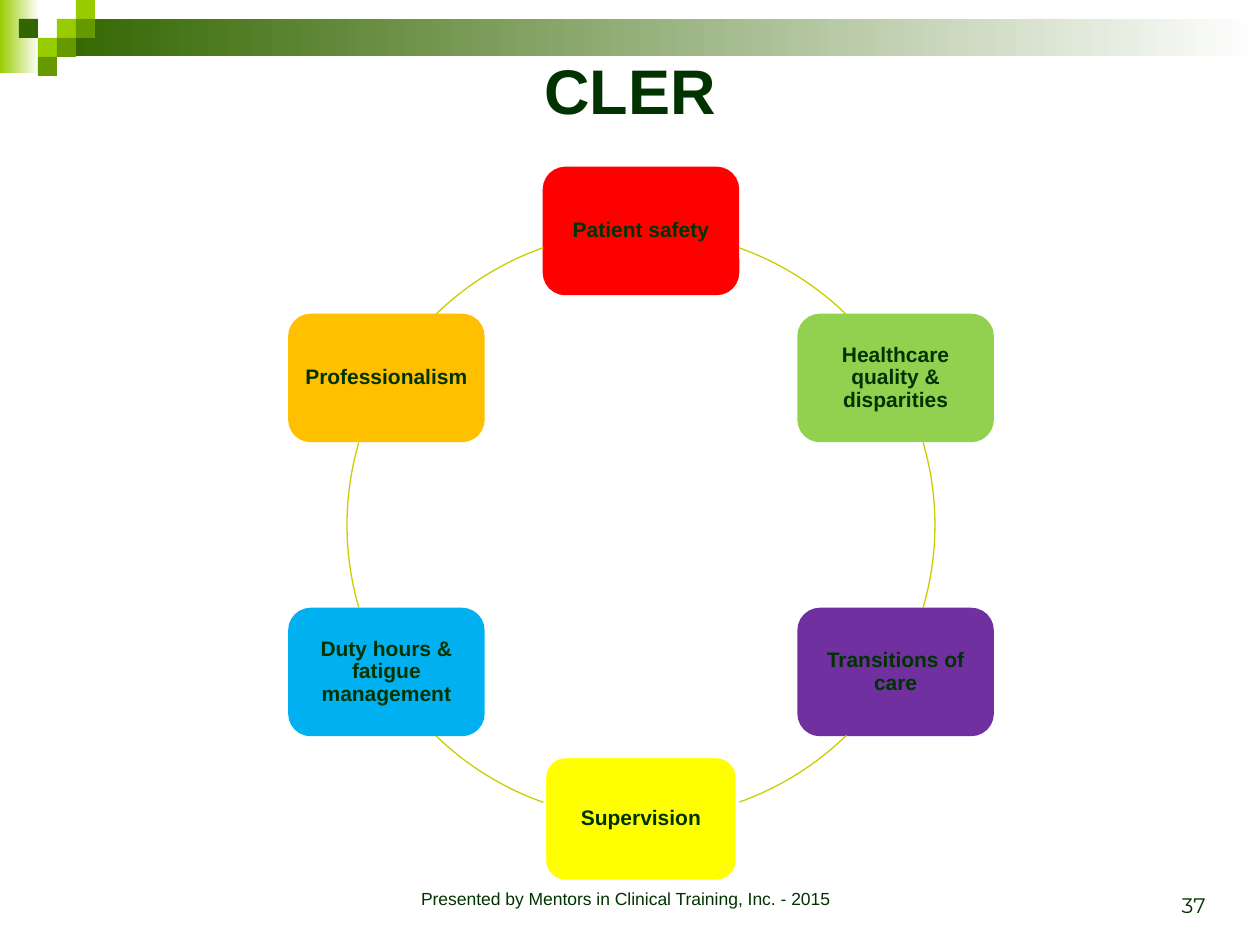
import math

import pptx
import pptx.dml.color
import pptx.enum.shapes
import pptx.enum.text
import pptx.util

SHAPES = pptx.enum.shapes.MSO_SHAPE
ANCHOR = pptx.enum.text.MSO_ANCHOR
ALIGN = pptx.enum.text.PP_ALIGN
PX = 914400 / 126
INK = "003300"


def color(value):
    return pptx.dml.color.RGBColor.from_string(value)


def write(shape, text, size, font="Arial", bold=False, align=ALIGN.CENTER,
          anchor=ANCHOR.MIDDLE):
    """Set one styled paragraph in the shape and return it."""
    frame = shape.text_frame
    frame.word_wrap = True
    frame.vertical_anchor = anchor
    para = frame.paragraphs[0]
    para.text = text
    para.alignment = align
    para.font.name = font
    para.font.size = pptx.util.Pt(size)
    para.font.bold = bold
    para.font.color.rgb = color(INK)
    return para


deck = pptx.Presentation()
deck.slide_width = round(1260 * PX)
deck.slide_height = round(945 * PX)
page = deck.slides.add_slide(deck.slide_layouts[6])

# Fading bands across the top
for left, top, width, height, start in [
    (0, 0, 39, 73, "99CC00"),
    (57, 19, 1203, 37, "336600"),
]:
    band = page.shapes.add_shape(
        SHAPES.RECTANGLE, *(round(v * PX) for v in (left, top, width, height)))
    band.shadow.inherit = False
    band.line.fill.background()
    band.fill.gradient()
    band.fill.gradient_angle = 0
    for stop, position, shade in zip(band.fill.gradient_stops, (0, 1), (start, "FFFFFF")):
        stop.position = position
        stop.color.rgb = color(shade)

# Checkered corner on a square grid
TILE = 19
for column, row, fill in [
    (3, 1, "99CC00"), (4, 0, "99CC00"), (4, 1, "669900"), (2, 2, "99CC00"),
    (1, 1, "336600"), (3, 2, "669900"), (2, 3, "669900"),
]:
    tile = page.shapes.add_shape(
        SHAPES.RECTANGLE,
        *(round(v * TILE * PX) for v in (column, row, 1, 1)))
    tile.shadow.inherit = False
    tile.fill.solid()
    tile.fill.fore_color.rgb = color(fill)
    tile.line.fill.background()

title = page.shapes.add_textbox(*(round(v * PX) for v in (63, 10, 1134, 158)))
write(title, "CLER", 36, bold=True)

# Topics around a ring, clockwise from the top
CENTER_X, CENTER_Y, RADIUS = 641, 525, 294
NODE_WIDTH, NODE_HEIGHT = 193, 125
topics = [
    ("Patient safety", "FF0000", "FF0000"),
    ("Healthcare quality & disparities", "92D050", "92D050"),
    ("Transitions of care", "7030A0", "7030A0"),
    ("Supervision", "FFFF00", "FFFFFF"),
    ("Duty hours & fatigue management", "00B0F0", "00B0F0"),
    ("Professionalism", "FFC000", "FFC000"),
]
# Start and end of the visible arc after each topic, in degrees
arcs = [(289.4, 314.3), (343.7, 16.3), (45.7, 70.6),
        (109.4, 134.3), (163.7, 196.3), (225.7, 250.6)]

for index, ((text, fill, outline), angles) in enumerate(zip(topics, arcs)):
    turn = math.radians(index * 360 / len(topics))
    left = CENTER_X + RADIUS * math.sin(turn) - NODE_WIDTH / 2
    top = CENTER_Y - RADIUS * math.cos(turn) - NODE_HEIGHT / 2
    node = page.shapes.add_shape(
        SHAPES.ROUNDED_RECTANGLE,
        *(round(v * PX) for v in (left, top, NODE_WIDTH, NODE_HEIGHT)))
    node.shadow.inherit = False
    node.fill.solid()
    node.fill.fore_color.rgb = color(fill)
    node.line.color.rgb = color(outline)
    node.line.width = pptx.util.Pt(2)
    frame = node.text_frame
    frame.margin_left = frame.margin_right = round(7 * PX)
    frame.margin_top = frame.margin_bottom = round(7 * PX)
    write(node, text, 12, bold=True).line_spacing = 0.9

    arc = page.shapes.add_shape(
        SHAPES.ARC,
        *(round(v * PX) for v in (CENTER_X - RADIUS, CENTER_Y - RADIUS,
                                  2 * RADIUS, 2 * RADIUS)))
    arc.shadow.inherit = False
    arc.fill.background()
    arc.line.color.rgb = color("CCCC00")
    arc.line.width = pptx.util.Pt(0.75)
    # Angles are stored in 60000ths of a degree, adjustments in 100000ths
    for position, angle in enumerate(angles):
        arc.adjustments[position] = angle * 0.6

footer = page.shapes.add_textbox(*(round(v * PX) for v in (347, 882, 557, 42)))
write(footer, "Presented by Mentors in Clinical Training, Inc. - 2015", 10,
      anchor=ANCHOR.TOP)

number = page.shapes.add_textbox(*(round(v * PX) for v in (924, 861, 294, 63)))
write(number, "37", 12, font="Montserrat", align=ALIGN.RIGHT, anchor=ANCHOR.BOTTOM)

deck.save("out.pptx")
